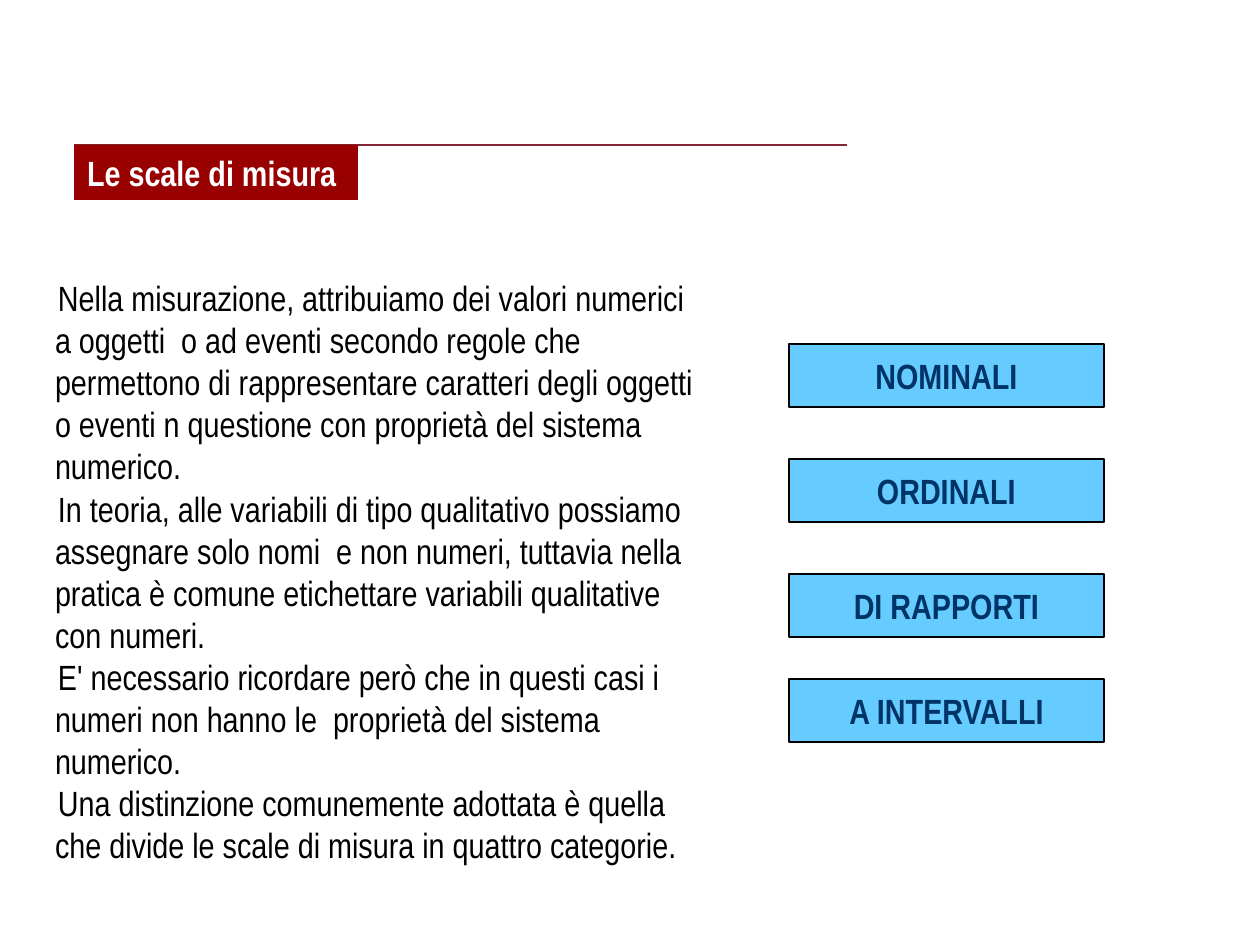
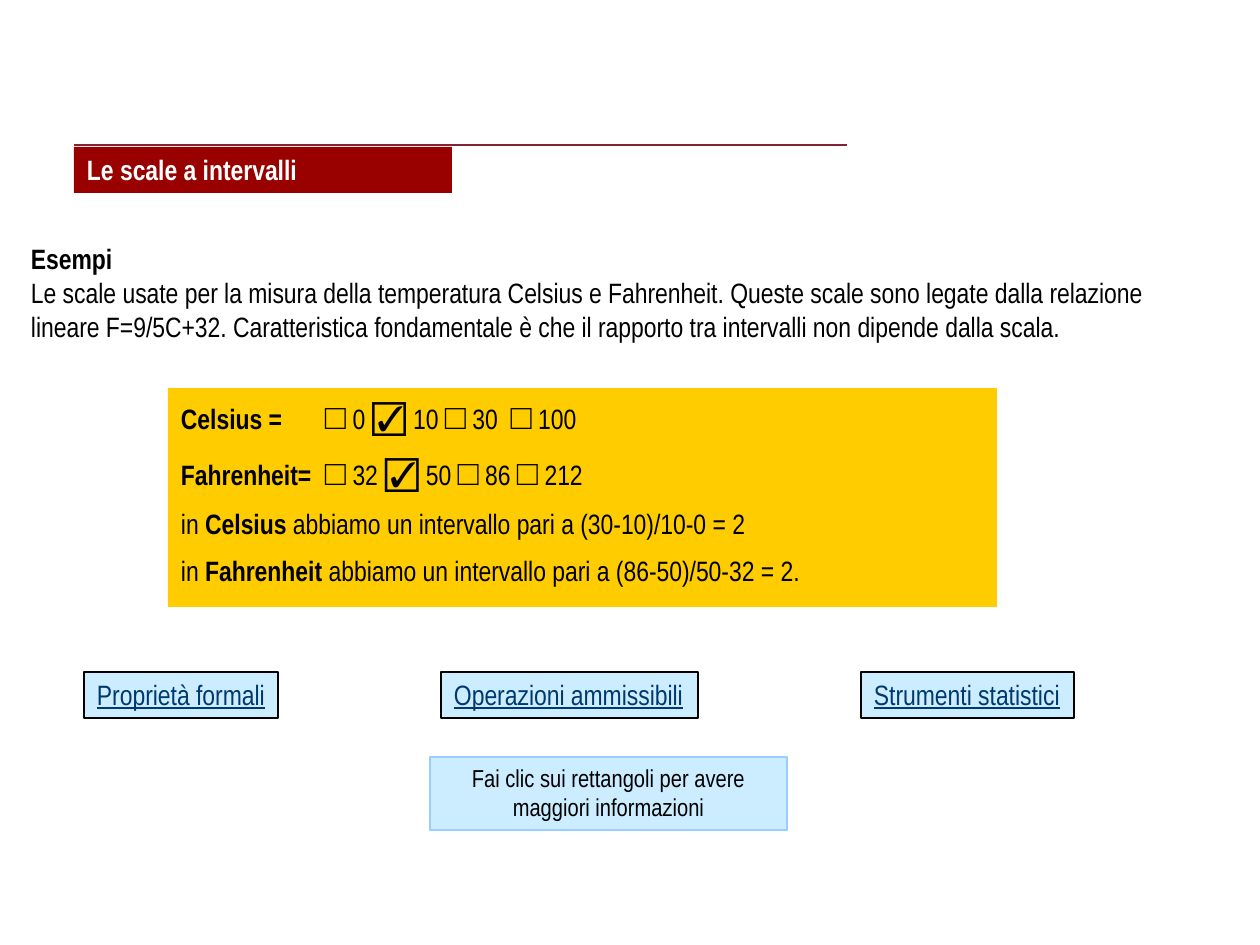
from lxml import etree
from pptx import Presentation
from pptx.dml.color import RGBColor
from pptx.enum.shapes import MSO_CONNECTOR, MSO_SHAPE
from pptx.enum.text import MSO_ANCHOR, PP_ALIGN
from pptx.oxml.ns import qn
from pptx.util import Pt

RECT = MSO_SHAPE.RECTANGLE
LINE = MSO_CONNECTOR.STRAIGHT
TOP, MIDDLE = MSO_ANCHOR.TOP, MSO_ANCHOR.MIDDLE
LEFT, CENTER = PP_ALIGN.LEFT, PP_ALIGN.CENTER

SCALE = 914400 / 126
FONT = "Arial Narrow"
MARKS = "□☑"
COLORS = {
    "rule": "822433", "band": "990000", "white": "FFFFFF", "black": "000000",
    "scale": "66CCFF", "navy": "003366", "gold": "FFCC00",
    "pale": "CCECFF", "link": "00396E", "edge": "99CCFF",
}

INTRO = [
    "Nella misurazione, attribuiamo dei valori numerici a oggetti  o ad eventi "
    "secondo regole che permettono di rappresentare caratteri degli oggetti "
    "o eventi n questione con proprietà del sistema numerico.",
    "In teoria, alle variabili di tipo qualitativo possiamo assegnare solo nomi  "
    "e non numeri, tuttavia nella pratica è comune etichettare variabili "
    "qualitative con numeri.",
    "E' necessario ricordare però che in questi casi i numeri non hanno le  "
    "proprietà del sistema numerico.",
    "Una distinzione comunemente adottata è quella che divide le scale di misura "
    "in quattro categorie.",
]
SCALES = [("NOMINALI", 344), ("ORDINALI", 459), ("DI RAPPORTI", 574),
          ("A INTERVALLI", 679)]
EXAMPLE = [
    "*Esempi*",
    "Le scale usate per la misura della temperatura Celsius e Fahrenheit. Queste "
    "scale sono legate dalla relazione lineare F=9/5C+32. Caratteristica "
    "fondamentale è che il rapporto tra intervalli non dipende dalla scala.",
]
DEGREES = [
    "*Celsius =*\t*□* 0 *☑* 10 *□* 30  *□* 100",
    "*Fahrenheit=*\t*□* 32 *☑* 50 *□* 86 *□* 212",
    "in *Celsius* abbiamo un intervallo pari a (30-10)/10-0 = 2",
    "in *Fahrenheit* abbiamo un intervallo pari a (86-50)/50-32 = 2.",
]
LINKS = [("Proprietà formali", 84, 194), ("Operazioni ammissibili", 441, 257),
         ("Strumenti statistici", 861, 213)]


def px(n):
    return round(n * SCALE)


def paint(name):
    return RGBColor.from_string(COLORS[name])


def add_runs(para, text):
    """Split text on asterisks: every second part is bold."""
    for i, part in enumerate(text.split("*")):
        if part:
            run = para.add_run()
            run.text = part
            if i % 2:
                run.font.bold = True
            if part in MARKS:
                run.font.size = Pt(20)


def write(shape, texts, size, color="black", bold=False, under=False,
          align=LEFT, anchor=TOP, inset=(13, 6), wrap=True, gap=0,
          indent=0, tab=0):
    frame = shape.text_frame
    frame.word_wrap = wrap
    frame.vertical_anchor = anchor
    frame.margin_left = frame.margin_right = px(inset[0])
    frame.margin_top = frame.margin_bottom = px(inset[1])
    for i, text in enumerate(texts):
        para = frame.add_paragraph() if i else frame.paragraphs[0]
        para.alignment = align
        if i and gap:
            para.space_before = Pt(gap)
        props = para._p.get_or_add_pPr()
        if indent:
            props.set("indent", str(px(indent)))
        if tab:
            stops = etree.SubElement(props, qn("a:tabLst"))
            etree.SubElement(stops, qn("a:tab"), pos=str(px(tab)), algn="l")
        font = para.font
        font.name, font.size = FONT, Pt(size)
        font.bold, font.underline = bold, under
        font.color.rgb = paint(color)
        add_runs(para, text)


def add_box(slide, area, fill, texts, size, line=None, **style):
    box = slide.shapes.add_shape(RECT, *map(px, area))
    box.shadow.inherit = False
    box.fill.solid()
    box.fill.fore_color.rgb = paint(fill)
    if line:
        box.line.color.rgb = paint(line)
        box.line.width = Pt(0.75)
    else:
        box.line.fill.background()
    write(box, texts, size, **style)


def add_text(slide, area, texts, size, **style):
    write(slide.shapes.add_textbox(*map(px, area)), texts, size, **style)


def add_rule(slide):
    rule = slide.shapes.add_connector(LINE, px(74), px(145), px(847), px(145))
    rule.line.color.rgb = paint("rule")
    rule.line.width = Pt(1.5)
    etree.SubElement(rule._element.spPr, qn("a:effectLst"))


def add_head(slide, title, area, size):
    add_rule(slide)
    add_box(slide, area, "band", [title], size, color="white", bold=True)


def scales_slide(slide):
    add_head(slide, "Le scale di misura", (74, 145, 284, 55), 20)
    add_text(slide, (42, 273, 672, 596), INTRO, 20, anchor=MIDDLE, indent=3)
    for name, top in SCALES:
        add_box(slide, (789, top, 315, 63), "scale", [name], 20, line="black",
                color="navy", bold=True, align=CENTER, anchor=MIDDLE)


def ranges_slide(slide):
    add_head(slide, "Le scale a intervalli", (74, 147, 378, 46), 16)
    add_text(slide, (31, 242, 1187, 102), EXAMPLE, 16, inset=(0, 0))
    add_box(slide, (168, 388, 829, 219), "gold", DEGREES, 16, gap=8, tab=144)
    for name, left, width in LINKS:
        add_box(slide, (left, 672, width, 46), "pale", [name], 16, line="black",
                color="link", under=True, wrap=False)
    add_box(slide, (430, 757, 357, 73), "pale",
            ["Fai clic sui rettangoli per avere maggiori informazioni"], 14,
            line="edge", align=CENTER)


def main():
    deck = Presentation()
    deck.slide_width, deck.slide_height = px(1260), px(945)
    blank = deck.slide_layouts[6]
    for build in (scales_slide, ranges_slide):
        build(deck.slides.add_slide(blank))
    deck.save("out.pptx")


if __name__ == "__main__":
    main()
